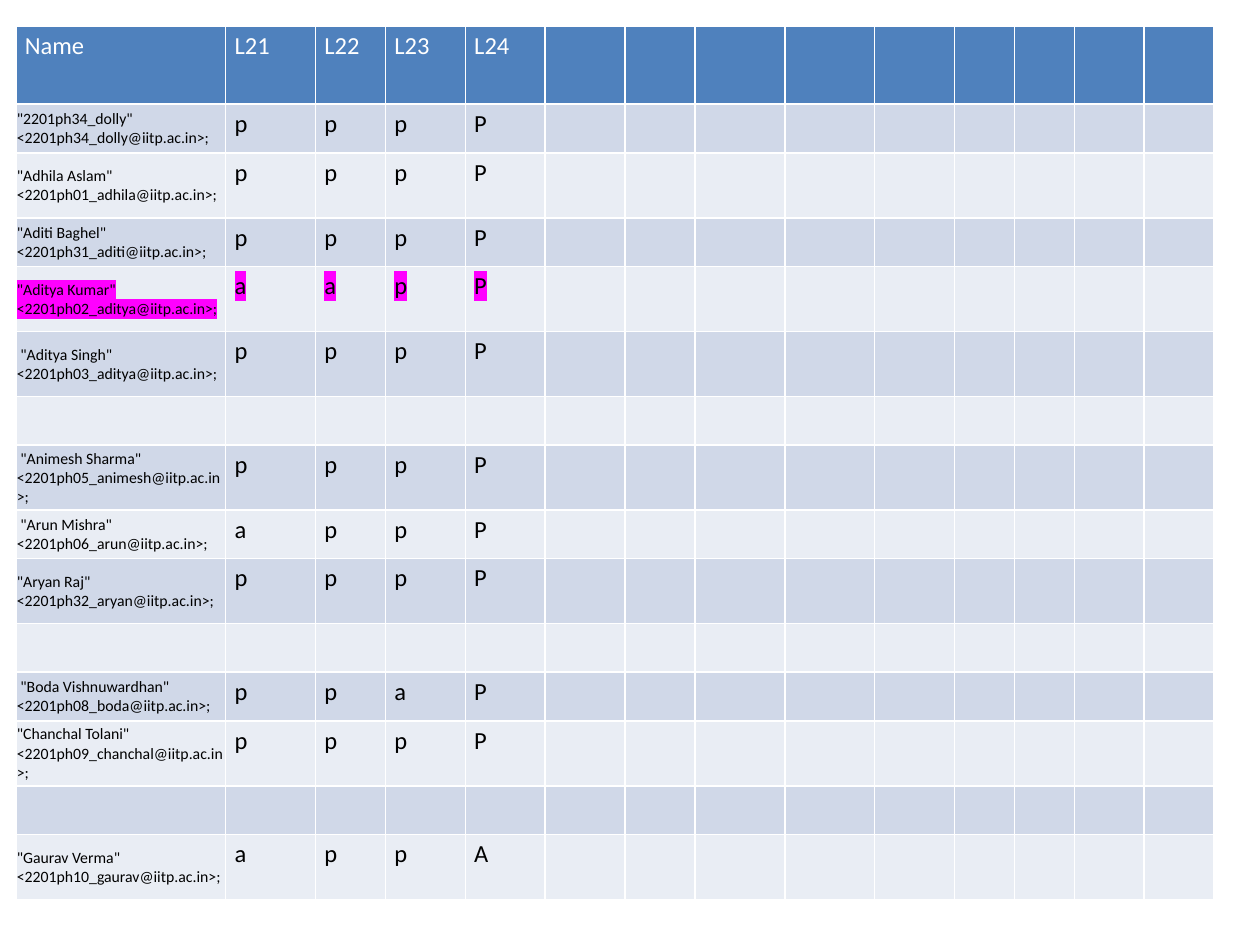
from dataclasses import dataclass

import lxml.etree
import pptx
import pptx.dml.color
import pptx.enum.text
import pptx.oxml.ns
import pptx.util

Cm = pptx.util.Cm
Pt = pptx.util.Pt

FONT = "Calibri"
HEAD = "4F81BD"
BANDS = ("D0D8E8", "E9EDF4")
MARK = "FF00FF"
BLACK = "000000"
WHITE = "FFFFFF"
LOW, TALL = 0.98, 1.31
TOP = 1.57
COLS = (4.23, 1.81, 1.41, 1.61, 1.61, 1.61, 1.41,
        1.81, 1.81, 1.61, 1.21, 1.21, 1.4, 1.4)
TITLES = ("Name", "L21", "L22", "L23", "L24")


@dataclass
class Entry:
    high: float
    name: str = ""
    user: str = ""
    marks: str = ""
    light: str = ""

    def label(self) -> str:
        return f"{self.name} <{self.user}@iitp.ac.in>;" if self.name else ""


@dataclass
class Style:
    size: int
    pads: tuple
    anchor: pptx.enum.text.MSO_ANCHOR


PLAIN = Style(14, (0.18, 0.1, 0.18, 0.1), pptx.enum.text.MSO_ANCHOR.TOP)
SMALL = Style(9, (0.02, 0.02, 0.02, 0), pptx.enum.text.MSO_ANCHOR.MIDDLE)

ENTRIES = (
    Entry(LOW, '"2201ph34_dolly"', "2201ph34_dolly", "pppP"),
    Entry(TALL, '"Adhila Aslam"', "2201ph01_adhila", "pppP"),
    Entry(LOW, '"Aditi Baghel"', "2201ph31_aditi", "pppP"),
    Entry(TALL, '"Aditya Kumar"', "2201ph02_aditya", "aapP", MARK),
    Entry(TALL, ' "Aditya Singh"', "2201ph03_aditya", "pppP"),
    Entry(LOW),
    Entry(TALL, ' "Animesh Sharma"', "2201ph05_animesh", "pppP"),
    Entry(LOW, ' "Arun Mishra"', "2201ph06_arun", "appP"),
    Entry(TALL, '"Aryan Raj"', "2201ph32_aryan", "pppP"),
    Entry(LOW),
    Entry(LOW, ' "Boda Vishnuwardhan"', "2201ph08_boda", "ppaP"),
    Entry(TALL, '"Chanchal Tolani"', "2201ph09_chanchal", "pppP"),
    Entry(LOW),
    Entry(TALL, '"Gaurav Verma"', "2201ph10_gaurav", "appA"),
)


def paint(form, tone: str) -> None:
    form.solid()
    form.fore_color.rgb = pptx.dml.color.RGBColor.from_string(tone)


def glow(run, tone: str) -> None:
    qn = pptx.oxml.ns.qn
    light = lxml.etree.SubElement(run.font._element, qn("a:highlight"))
    lxml.etree.SubElement(light, qn("a:srgbClr"), val=tone)


def write(cell, text: str, style: Style, fill: str, ink: str, light: str = "") -> None:
    paint(cell.fill, fill)
    cell.vertical_anchor = style.anchor
    (cell.margin_left, cell.margin_top,
     cell.margin_right, cell.margin_bottom) = map(Cm, style.pads)
    para = cell.text_frame.paragraphs[0]
    font = para.font
    font.name, font.size, font.bold = FONT, Pt(style.size), False
    paint(font.fill, ink)
    if text:
        run = para.add_run()
        run.text = text
        if light:
            glow(run, light)


def fill_row(table, index: int, entry: Entry) -> None:
    band = BANDS[(index - 1) % 2]
    texts = [entry.label(), *entry.marks]
    for col in range(len(COLS)):
        text = texts[col] if col < len(texts) else ""
        style = SMALL if text and col == 0 else PLAIN
        write(table.cell(index, col), text, style, band, BLACK, entry.light)


def main() -> None:
    deck = pptx.Presentation()
    deck.slide_width, deck.slide_height = Cm(25.4), Cm(19.05)
    slide = deck.slides.add_slide(deck.slide_layouts[6])
    highs = [TOP] + [entry.high for entry in ENTRIES]
    frame = slide.shapes.add_table(len(highs), len(COLS), Cm(0.32), Cm(0.53),
                                   Cm(sum(COLS)), Cm(sum(highs)))
    table = frame.table
    for col, wide in zip(table.columns, COLS):
        col.width = Cm(wide)
    for row, high in zip(table.rows, highs):
        row.height = Cm(high)
    for col in range(len(COLS)):
        title = TITLES[col] if col < len(TITLES) else ""
        write(table.cell(0, col), title, PLAIN, HEAD, WHITE)
    for index, entry in enumerate(ENTRIES, 1):
        fill_row(table, index, entry)
    deck.save("out.pptx")


if __name__ == "__main__":
    main()
